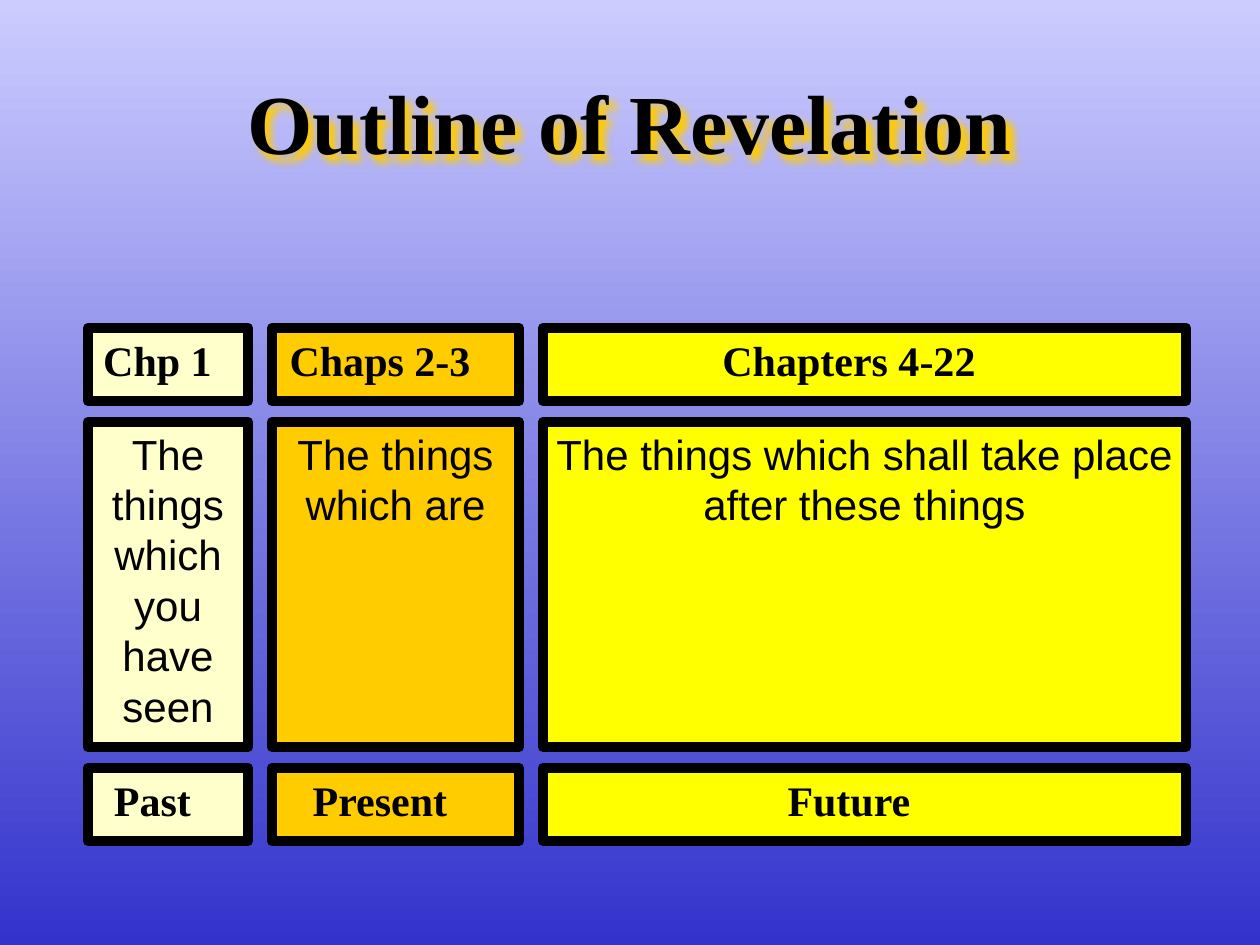
from lxml.etree import SubElement
from pptx import Presentation
from pptx.dml.color import RGBColor
from pptx.enum.shapes import MSO_SHAPE
from pptx.enum.text import MSO_ANCHOR, PP_ALIGN
from pptx.oxml.ns import qn
from pptx.util import Pt

PX = 914400 / 126
BLACK = RGBColor(0x00, 0x00, 0x00)
CREAM = RGBColor(0xFF, 0xFF, 0xCC)
GOLD = RGBColor(0xFF, 0xCC, 0x00)
YELLOW = RGBColor(0xFF, 0xFF, 0x00)
PALE = RGBColor(0xCC, 0xCC, 0xFF)
BLUE = RGBColor(0x33, 0x33, 0xCC)
SERIF, SANS = "Times New Roman", "Arial"

COLS = [
    (88, 160, CREAM, 21, "Chp 1", "The things which you have seen", "Past"),
    (272, 247, GOLD, 31, "Chaps 2-3", "The things which are", "Present"),
    (543, 643, YELLOW, 31, "Chapters 4-22",
     "The things which shall take place after these things", "Future"),
]
HEAD, BODY, FOOT = (328, 73), (422, 325), (768, 73)


def px(num):
    return round(num * PX)


def place(shape, left, top, width, height):
    shape.left, shape.top = px(left), px(top)
    shape.width, shape.height = px(width), px(height)


def write(frame, text, size, face, bold):
    para = frame.paragraphs[0]
    para.alignment = PP_ALIGN.CENTER
    run = para.add_run()
    run.text = text
    font = run.font
    font.size, font.name, font.bold = Pt(size), face, bold
    font.color.rgb = BLACK


def paint(slide):
    fill = slide.background.fill
    fill.gradient()
    fill.gradient_angle = 270
    for stop, color in zip(fill.gradient_stops, (PALE, BLUE)):
        stop.color.rgb = color


def glow(shape):
    effects = SubElement(shape.element.spPr, qn("a:effectLst"))
    shade = SubElement(effects, qn("a:outerShdw"), blurRad="50800",
                       dist="53882", dir="2700000", algn="ctr", rotWithShape="0")
    SubElement(shade, qn("a:srgbClr"), val=str(GOLD))


def add_title(slide, text):
    title = slide.shapes.title
    place(title, 0, 63, 1260, 116)
    title.text_frame.vertical_anchor = MSO_ANCHOR.MIDDLE
    write(title.text_frame, text, 48, SERIF, True)
    glow(title)


def add_box(slide, left, width, row, color, text):
    top, height = row
    box = slide.shapes.add_shape(MSO_SHAPE.RECTANGLE, 0, 0, 0, 0)
    place(box, left, top, width, height)
    box.shadow.inherit = False
    box.fill.solid()
    box.fill.fore_color.rgb = color
    box.line.color.rgb = BLACK
    box.line.width = Pt(6)
    frame = box.text_frame
    frame.word_wrap = True
    frame.vertical_anchor = MSO_ANCHOR.TOP
    label = row != BODY
    write(frame, text, 24, SERIF if label else SANS, label)
    return frame


def add_label(slide, left, width, row, color, text, pad):
    frame = add_box(slide, left, width, row, color, text)
    frame.margin_left, frame.margin_right = 0, px(pad)


def main():
    deck = Presentation()
    deck.slide_width, deck.slide_height = px(1260), px(945)
    slide = deck.slides.add_slide(deck.slide_layouts[5])
    paint(slide)
    add_title(slide, "Outline of Revelation")
    for left, width, color, pad, head, body, foot in COLS:
        add_box(slide, left, width, BODY, color, body)
        add_label(slide, left, width, HEAD, color, head, pad)
        add_label(slide, left, width, FOOT, color, foot, 31)
    deck.save("out.pptx")


if __name__ == "__main__":
    main()
